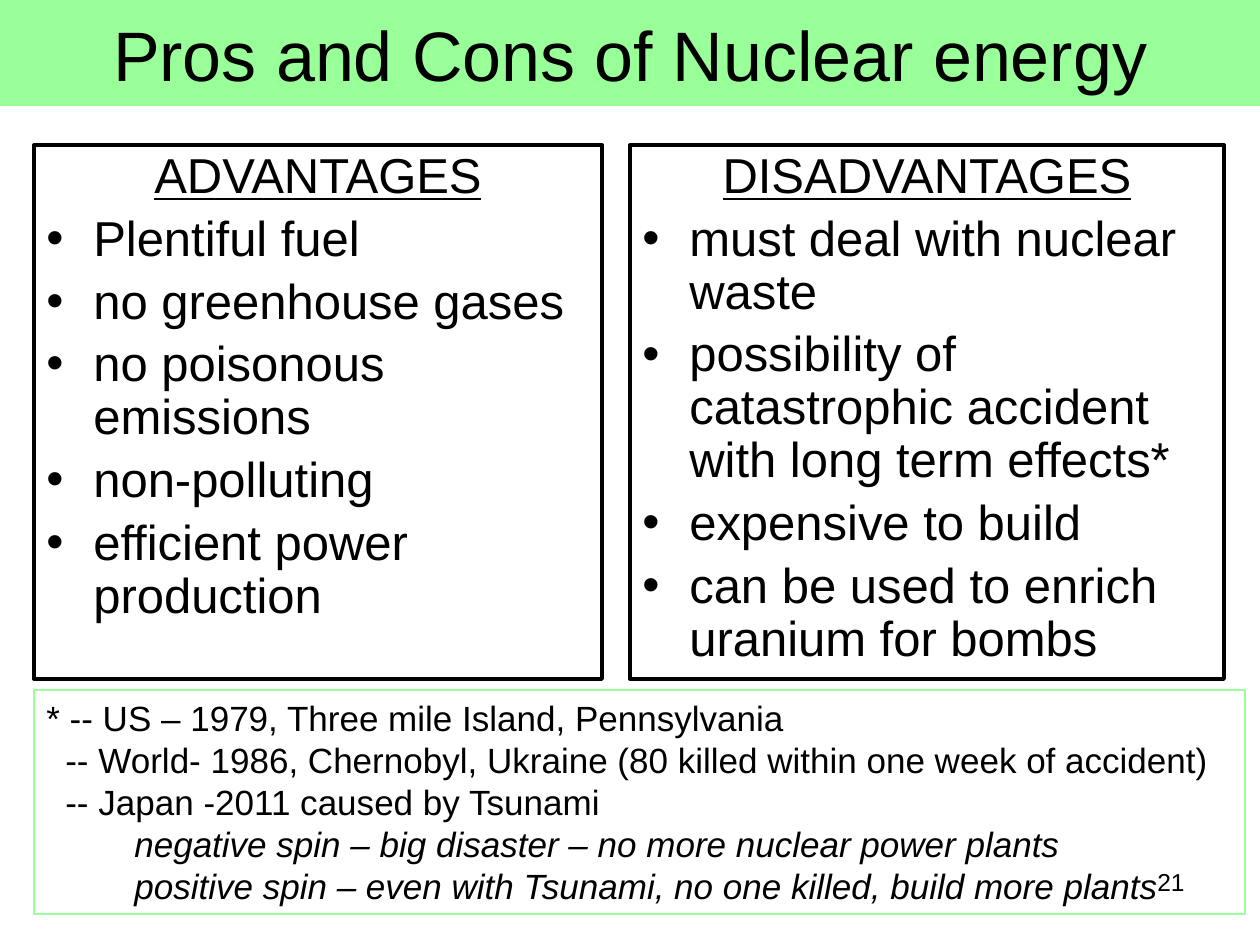
import pptx
import pptx.dml.color
import pptx.enum.shapes
import pptx.enum.text
import pptx.oxml.ns
import pptx.util
from lxml import etree

PX = 914400 / 126
BLACK = pptx.dml.color.RGBColor(0x00, 0x00, 0x00)
GREEN = pptx.dml.color.RGBColor(0x99, 0xFF, 0x99)
ALIGN = pptx.enum.text.PP_ALIGN
ANCHOR = pptx.enum.text.MSO_ANCHOR

ADVANTAGES = [
    "Plentiful fuel",
    "no greenhouse gases",
    "no poisonous emissions",
    "non-polluting",
    "efficient power production",
]
DISADVANTAGES = [
    "must deal with nuclear waste",
    "possibility of catastrophic accident\nwith long term effects*",
    "expensive to build",
    "can be used to enrich uranium for bombs",
]
ACCIDENTS = [
    ("* -- US – 1979, Three mile Island, Pennsylvania", 0, False),
    ("-- World- 1986, Chernobyl, Ukraine (80 killed within one week of accident)", 19, False),
    ("-- Japan -2011 caused by Tsunami", 19, False),
    ("negative spin – big disaster – no more nuclear power plants", 88, True),
    ("positive spin – even with Tsunami, no one killed, build more plants", 88, True),
]


def px(n):
    return pptx.util.Emu(round(n * PX))


def add_box(s, box, fill=None, line=None, weight=0.75, anchor=ANCHOR.TOP):
    sp = s.shapes.add_shape(pptx.enum.shapes.MSO_SHAPE.RECTANGLE, *map(px, box))
    sp.shadow.inherit = False
    if fill is None:
        sp.fill.background()
    else:
        sp.fill.solid()
        sp.fill.fore_color.rgb = fill
    if line is None:
        sp.line.fill.background()
    else:
        sp.line.color.rgb = line
        sp.line.width = pptx.util.Pt(weight)
    tf = sp.text_frame
    tf.word_wrap = True
    tf.vertical_anchor = anchor
    return tf


def add_paragraph(tf, first, align=ALIGN.LEFT):
    p = tf.paragraphs[0] if first else tf.add_paragraph()
    p.alignment = align
    return p


def add_run(p, text, size, underline=False, italic=False):
    r = p.add_run()
    r.text = text
    r.font.name = "Arial"
    r.font.size = pptx.util.Pt(size)
    r.font.color.rgb = BLACK
    r.font.underline = underline
    r.font.italic = italic


def set_indent(p, left, first=0):
    pPr = p._p.get_or_add_pPr()
    pPr.set("marL", str(px(left)))
    pPr.set("indent", str(px(first)))
    return pPr


def add_bullet(p):
    pPr = set_indent(p, 47, -47)
    font = etree.SubElement(pPr, pptx.oxml.ns.qn("a:buFont"))
    font.set("typeface", "Arial")
    etree.SubElement(pPr, pptx.oxml.ns.qn("a:buChar")).set("char", "•")


def add_title(s, box, text):
    tf = add_box(s, box, fill=GREEN, anchor=ANCHOR.MIDDLE)
    add_run(add_paragraph(tf, True, ALIGN.CENTER), text, 40)


def add_column(s, box, heading, items):
    tf = add_box(s, box, line=BLACK, weight=2.25)
    for i, text in enumerate([heading] + items):
        is_heading = i == 0
        p = add_paragraph(tf, is_heading, ALIGN.CENTER if is_heading else ALIGN.LEFT)
        p.line_spacing = 0.9
        p.space_before = pptx.util.Pt(5.6)
        if not is_heading:
            add_bullet(p)
        for j, part in enumerate(text.split("\n")):
            if j:
                p.add_line_break()
            add_run(p, part, 28, underline=is_heading)


def add_accidents(s, box, lines):
    tf = add_box(s, box, line=GREEN)
    for i, (text, left, italic) in enumerate(lines):
        p = add_paragraph(tf, i == 0)
        set_indent(p, left)
        add_run(p, text, 20, italic=italic)


def add_slide_number(s, box, text):
    tf = s.shapes.add_textbox(*map(px, box)).text_frame
    tf.word_wrap = True
    add_run(add_paragraph(tf, True, ALIGN.RIGHT), text, 14)


def main():
    prs = pptx.Presentation()
    prs.slide_width, prs.slide_height = px(1260), px(945)
    s = prs.slides.add_slide(prs.slide_layouts[6])
    add_title(s, (0, 0, 1260, 106), "Pros and Cons of Nuclear energy")
    add_column(s, (34, 145, 568, 534), "ADVANTAGES", ADVANTAGES)
    add_column(s, (630, 145, 594, 534), "DISADVANTAGES", DISADVANTAGES)
    add_accidents(s, (34, 690, 1211, 224), ACCIDENTS)
    add_slide_number(s, (903, 861, 294, 66), "21")
    prs.save("out.pptx")


if __name__ == "__main__":
    main()
